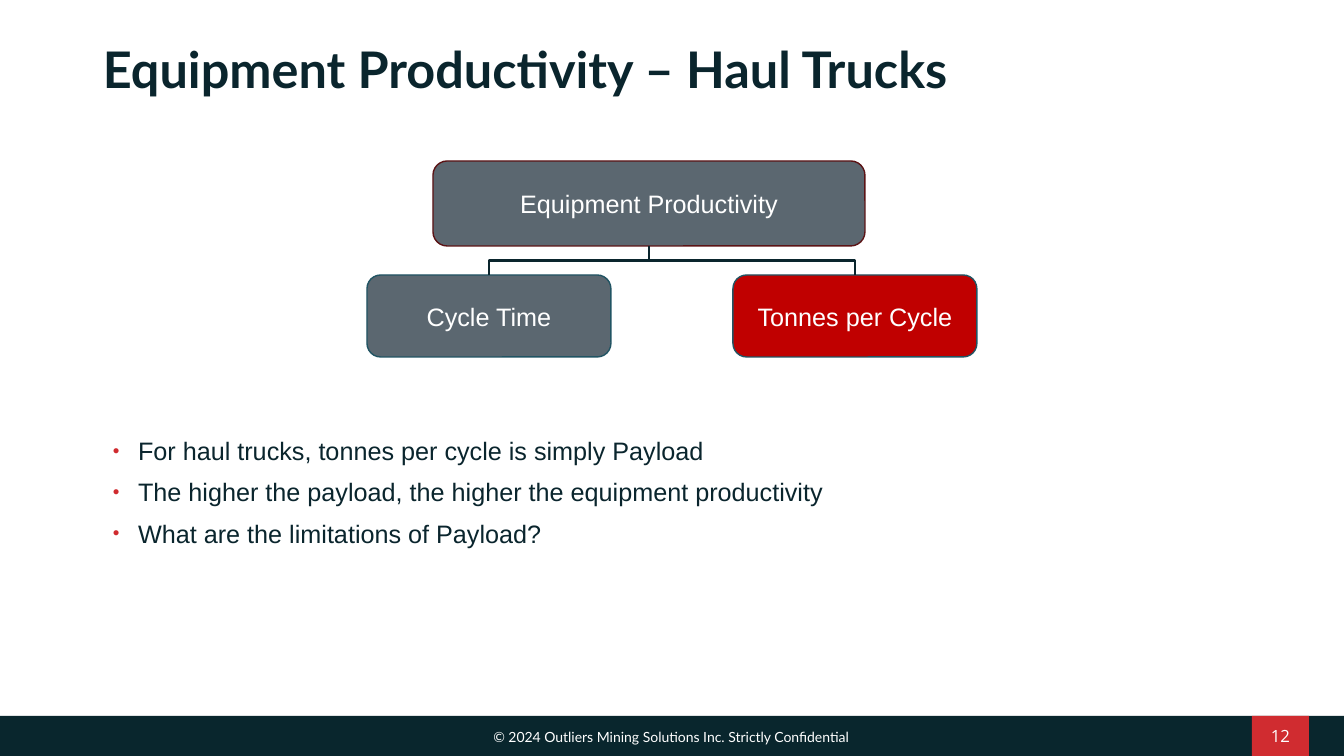
import pptx
import pptx.dml.color
import pptx.enum.shapes
import pptx.enum.text
import pptx.oxml.ns
import pptx.util
from lxml import etree

EMU_PER_PX = 914400 / 100.8
INK, SLATE, RED = "0A252D", "5B6770", "C00000"
WHITE, TEAL, MAROON = "FFFFFF", "215463", "5B1315"
BAR, BADGE, BULLET = "09262D", "D02C30", "D02B2F"
CENTER = pptx.enum.text.PP_ALIGN.CENTER
LEFT = pptx.enum.text.PP_ALIGN.LEFT
MIDDLE = pptx.enum.text.MSO_ANCHOR.MIDDLE
TOP = pptx.enum.text.MSO_ANCHOR.TOP
SHAPES = pptx.enum.shapes.MSO_SHAPE


def px(*lengths):
    """Turn pixel lengths into a list of EMU lengths."""
    return [pptx.util.Emu(round(length * EMU_PER_PX)) for length in lengths]


def color(code):
    return pptx.dml.color.RGBColor.from_string(code)


def add_child(parent, tag, **attributes):
    return etree.SubElement(parent, pptx.oxml.ns.qn(tag), attributes)


def add_run(para, text, size, font, ink, bold=False):
    span = para.add_run()
    span.text = text
    span.font.size = pptx.util.Pt(size)
    span.font.name = font
    span.font.bold = bold
    span.font.color.rgb = color(ink)


def add_text(page, place, text, size, font, ink,
             align=CENTER, anchor=TOP, bold=False, spacing=None):
    box = page.shapes.add_textbox(*px(*place))
    frame = box.text_frame
    frame.word_wrap = True
    frame.vertical_anchor = anchor
    para = frame.paragraphs[0]
    para.alignment = align
    if spacing:
        para.line_spacing = spacing
    add_run(para, text, size, font, ink, bold)


def add_block(page, kind, place, fill, line=None):
    block = page.shapes.add_shape(kind, *px(*place))
    block.shadow.inherit = False
    block.fill.solid()
    block.fill.fore_color.rgb = color(fill)
    if line:
        block.line.color.rgb = color(line)
        block.line.width = pptx.util.Pt(1)
    else:
        block.line.fill.background()
    return block


def add_node(page, place, text, fill, line):
    node = add_block(page, SHAPES.ROUNDED_RECTANGLE, place, fill, line)
    node.text_frame.word_wrap = True
    node.text_frame.vertical_anchor = MIDDLE
    para = node.text_frame.paragraphs[0]
    para.alignment = CENTER
    add_run(para, text, 18, "Arial", WHITE)
    return node


def add_branch(page, child, parent):
    """Join a child's top to its parent's bottom with an upright elbow."""
    start_x = child.left + child.width // 2
    end_x = parent.left + parent.width // 2
    parent_bottom = parent.top + parent.height
    rise, run = child.top - parent_bottom, abs(end_x - start_x)

    branch = page.shapes.add_connector(
        pptx.enum.shapes.MSO_CONNECTOR.ELBOW,
        start_x, child.top, end_x, parent_bottom)
    branch.begin_connect(child, 0)
    branch.end_connect(parent, 2)
    # The elbow leaves sideways, so it is turned a quarter about its centre.
    branch.left = (start_x + end_x - rise) // 2
    branch.top = (child.top + parent_bottom - run) // 2
    branch.width, branch.height = rise, run
    on_left = start_x < end_x
    frame = branch._element.spPr.find(pptx.oxml.ns.qn("a:xfrm"))
    frame.set("rot", str((90 if on_left else 270) * 60000))
    frame.set("flipH", "1" if on_left else "0")
    frame.set("flipV", "1")

    branch.line.color.rgb = color(INK)
    branch.line.width = pptx.util.Pt(1.5)
    add_child(branch._element.spPr, "a:effectLst")


def add_bullets(page, place, lines):
    box = page.shapes.add_textbox(*px(*place))
    frame = box.text_frame
    frame.word_wrap = True
    for index, line in enumerate(lines):
        para = frame.add_paragraph() if index else frame.paragraphs[0]
        para.line_spacing = 0.9
        if index:
            para.space_before = pptx.util.Pt(10)
        settings = para._p.get_or_add_pPr()
        indent = pptx.util.Inches(0.25)
        settings.set("marL", str(indent))
        settings.set("indent", str(-indent))
        tint = add_child(settings, "a:buClr")
        add_child(tint, "a:srgbClr", val=BULLET)
        add_child(settings, "a:buSzPct", val="75000")
        add_child(settings, "a:buFont", typeface="Arial")
        add_child(settings, "a:buChar", char="•")
        add_run(para, line, 18, "Arial", INK)


def add_footer(page):
    badge_place = (1252, 716, 57, 40)
    add_block(page, SHAPES.RECTANGLE, (0, 716, 1344, 40), BAR)
    add_block(page, SHAPES.RECTANGLE, badge_place, BADGE)
    add_text(page, (390, 724, 562, 27),
             "© 2024 Outliers Mining Solutions Inc. Strictly Confidential",
             10, "Lato", WHITE)
    add_text(page, badge_place, "12", 12, "Open Sans", WHITE, anchor=MIDDLE)


def main():
    deck = pptx.Presentation()
    deck.slide_width, deck.slide_height = px(1344, 756)
    page = deck.slides.add_slide(deck.slide_layouts[6])

    add_footer(page)
    add_text(page, (93, 49, 1159, 46), "Equipment Productivity – Haul Trucks",
             36, "Lato", INK, LEFT, MIDDLE, bold=True, spacing=0.9)
    add_bullets(page, (103, 434, 1188, 151), [
        "For haul trucks, tonnes per cycle is simply Payload",
        "The higher the payload, the higher the equipment productivity",
        "What are the limitations of Payload?",
    ])

    productivity = add_node(page, (433, 161, 432, 85),
                            "Equipment Productivity", SLATE, MAROON)
    factors = [(367, "Cycle Time", SLATE), (733, "Tonnes per Cycle", RED)]
    for left, name, fill in factors:
        factor = add_node(page, (left, 275, 244, 82), name, fill, TEAL)
        add_branch(page, factor, productivity)

    deck.save("out.pptx")


if __name__ == "__main__":
    main()
